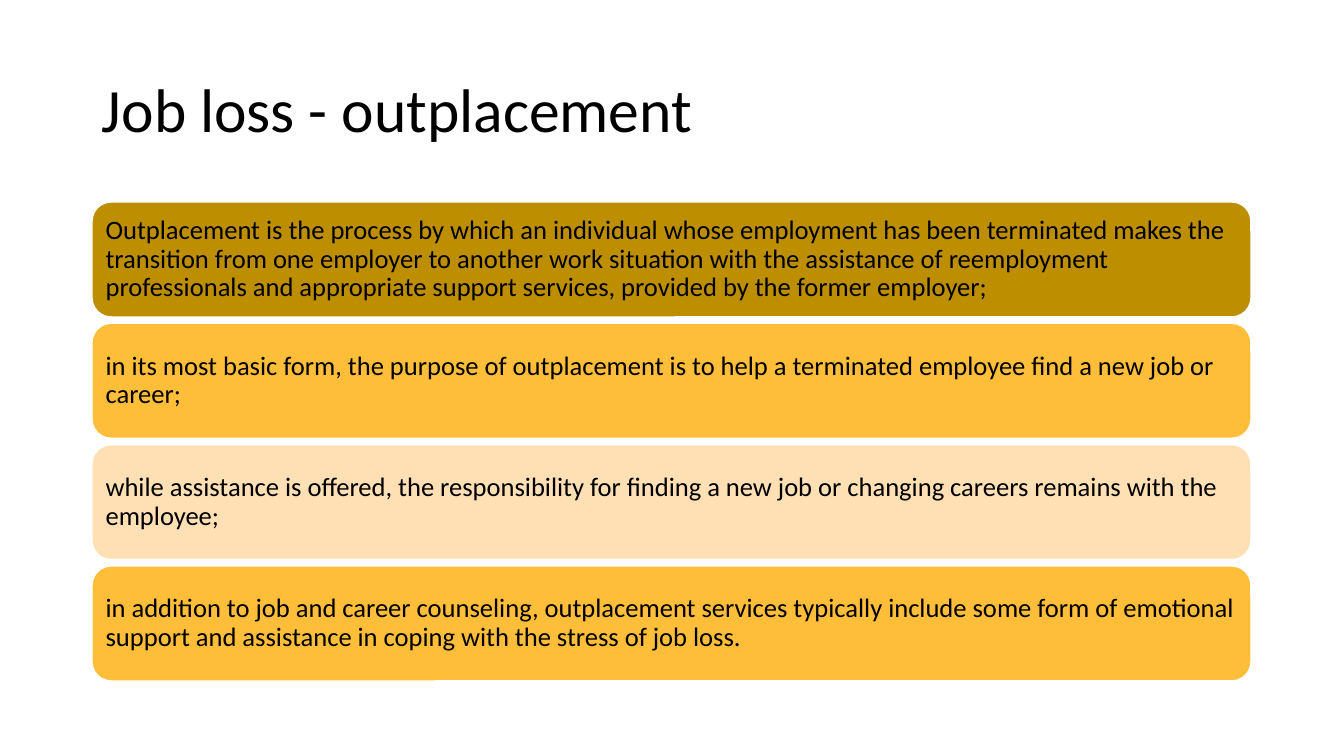
from pptx import Presentation
from pptx.dml.color import RGBColor
from pptx.enum.shapes import MSO_SHAPE as Preset
from pptx.enum.text import MSO_ANCHOR as Anchor, PP_ALIGN as Align
from pptx.util import Pt

EMU_PER_PX = 914400 / 100.8
COLORS = {
    "text": "000000",
    "outline": "FFFFFF",
    "dark": "BD8E00",
    "amber": "FFBE39",
    "pale": "FFE0B4",
}
TITLE = "Job loss - outplacement"
CARDS = [
    ("dark", "Outplacement is the process by which an individual whose employment has been "
             "terminated makes the transition from one employer to another work situation with "
             "the assistance of reemployment professionals and appropriate support services, "
             "provided by the former employer;"),
    ("amber", "in its most basic form, the purpose of outplacement is to help a terminated "
              "employee find a new job or career;"),
    ("pale", "while assistance is offered, the responsibility for finding a new job or changing "
             "careers remains with the employee;"),
    ("amber", "in addition to job and career counseling, outplacement services typically include "
              "some form of emotional support and assistance in coping with the stress of job "
              "loss."),
]


def px(length):
    return round(length * EMU_PER_PX)


def color(name):
    return RGBColor.from_string(COLORS[name])


def write_text(shape, text, size, margin_x, margin_y, font="Calibri", color_name="text"):
    frame = shape.text_frame
    frame.word_wrap = True
    frame.vertical_anchor = Anchor.MIDDLE
    frame.margin_left = frame.margin_right = px(margin_x)
    frame.margin_top = frame.margin_bottom = px(margin_y)
    paragraph = frame.paragraphs[0]
    paragraph.alignment = Align.LEFT
    paragraph.line_spacing = 0.9
    run = paragraph.add_run()
    run.text = text
    run.font.name = font
    run.font.size = Pt(size)
    run.font.color.rgb = color(color_name)


def add_title(slide, left, top, width, height):
    box = slide.shapes.add_textbox(px(left), px(top), px(width), px(height))
    write_text(box, TITLE, size=44, margin_x=10, margin_y=5)


def add_cards(slide, left, top, width, height, card_height):
    """Stack the cards so that equal gaps fill the given height."""
    pitch = (height - card_height) / (len(CARDS) - 1)
    for index, (fill_name, text) in enumerate(CARDS):
        card = slide.shapes.add_shape(
            Preset.ROUNDED_RECTANGLE,
            px(left), px(top + index * pitch), px(width), px(card_height))
        card.shadow.inherit = False
        card.fill.solid()
        card.fill.fore_color.rgb = color(fill_name)
        card.line.color.rgb = color("outline")
        card.line.width = Pt(1)
        write_text(card, text, size=19, margin_x=8, margin_y=8)


def main():
    presentation = Presentation()
    presentation.slide_width = px(1344)
    presentation.slide_height = px(756)
    slide = presentation.slides.add_slide(presentation.slide_layouts[6])
    add_title(slide, 92, 40, 1159, 146)
    add_cards(slide, 92, 202, 1159, 479, card_height=115)
    presentation.save("out.pptx")


if __name__ == "__main__":
    main()
